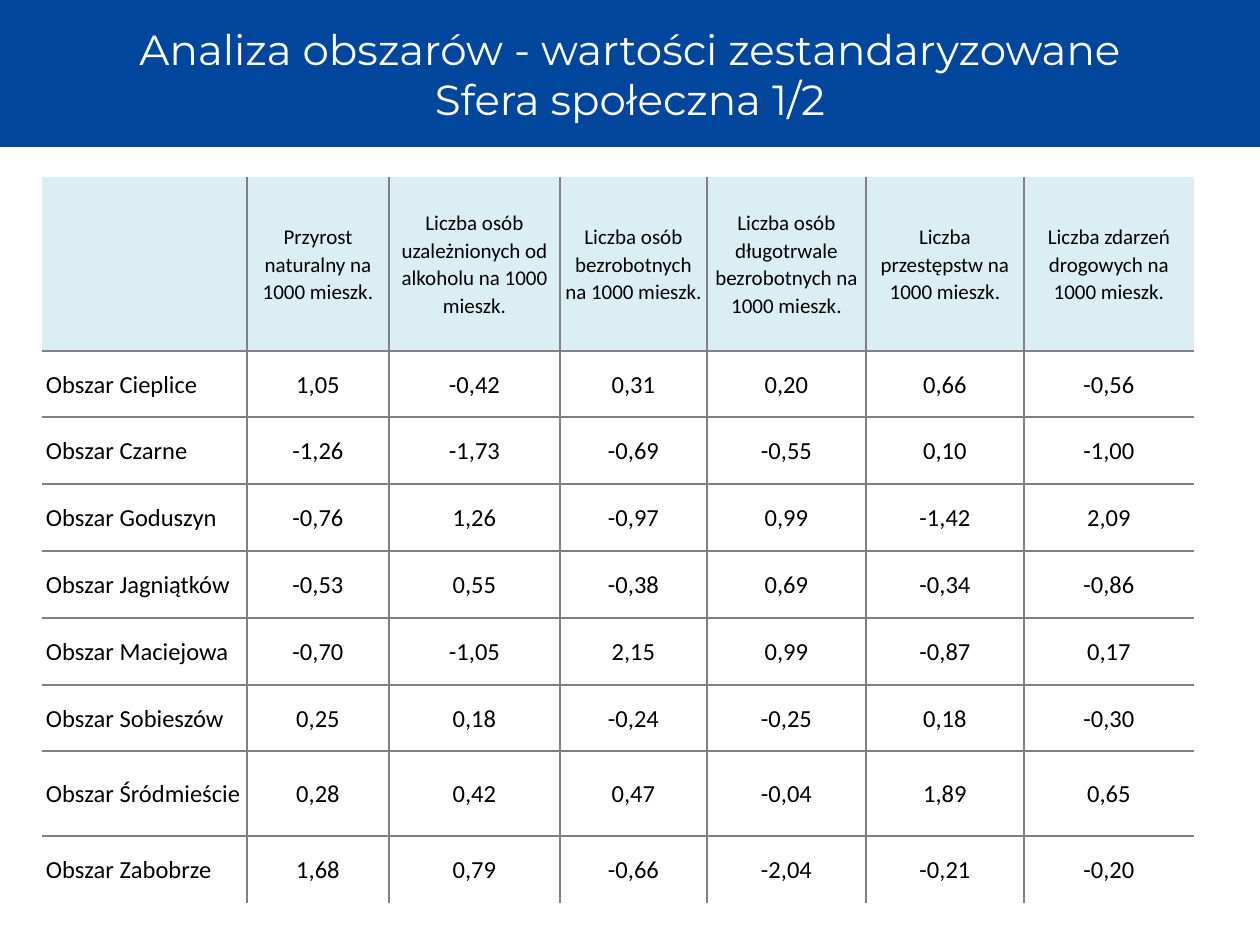
import pptx
import pptx.util
import pptx.dml.color
import pptx.enum.shapes
import pptx.enum.text
import pptx.oxml
import pptx.oxml.ns
from dataclasses import dataclass

TITLE = ["Analiza obszarów - wartości zestandaryzowane", "Sfera społeczna 1/2"]
HEADERS = [
    "",
    "Przyrost naturalny na 1000 mieszk.",
    "Liczba osób uzależnionych od alkoholu na 1000 mieszk.",
    "Liczba osób bezrobotnych na 1000 mieszk.",
    "Liczba osób długotrwale bezrobotnych na 1000 mieszk.",
    "Liczba przestępstw na 1000 mieszk.",
    "Liczba zdarzeń drogowych na 1000 mieszk.",
]
AREAS = [
    ("Obszar Cieplice", "1,05", "-0,42", "0,31", "0,20", "0,66", "-0,56"),
    ("Obszar Czarne", "-1,26", "-1,73", "-0,69", "-0,55", "0,10", "-1,00"),
    ("Obszar Goduszyn", "-0,76", "1,26", "-0,97", "0,99", "-1,42", "2,09"),
    ("Obszar Jagniątków", "-0,53", "0,55", "-0,38", "0,69", "-0,34", "-0,86"),
    ("Obszar Maciejowa", "-0,70", "-1,05", "2,15", "0,99", "-0,87", "0,17"),
    ("Obszar Sobieszów", "0,25", "0,18", "-0,24", "-0,25", "0,18", "-0,30"),
    ("Obszar Śródmieście", "0,28", "0,42", "0,47", "-0,04", "1,89", "0,65"),
    ("Obszar Zabobrze", "1,68", "0,79", "-0,66", "-2,04", "-0,21", "-0,20"),
]
COL_WIDTHS = [205, 142, 171, 147, 159, 158, 170]
ROW_HEIGHTS = [174, 66, 67, 67, 67, 67, 66, 85, 67]
TABLE_LEFT, TABLE_TOP = 42, 177
SLIDE_W, SLIDE_H, BANNER_H = 1260, 945, 147
CELL_INSET = 4


@dataclass(frozen=True)
class Theme:
    banner: str = "00469C"
    header: str = "DBEEF4"
    body: str = "FFFFFF"
    grid: str = "808080"
    text: str = "000000"
    title_text: str = "FFFFFF"
    title_font: str = "Montserrat"
    table_font: str = "Calibri"
    title_size: int = 24
    header_size: int = 12
    body_size: int = 14
    grid_pt: int = 1


THEME = Theme()
ALIGN = pptx.enum.text.PP_ALIGN
MIDDLE = pptx.enum.text.MSO_ANCHOR.MIDDLE


def px(n):
    return pptx.util.Emu(round(n * 914400 / 126))


def rgb(value):
    return pptx.dml.color.RGBColor.from_string(value)


def add_run(p, text, font, size, color):
    r = p.add_run()
    r.text = text
    r.font.name = font
    r.font.size = pptx.util.Pt(size)
    r.font.color.rgb = rgb(color)


def set_borders(cell, visible):
    tc_pr = cell._tc.get_or_add_tcPr()
    width = pptx.util.Pt(THEME.grid_pt)
    for i, side in enumerate("LRTB"):
        fill = "<a:noFill/>"
        if side in visible:
            fill = f'<a:solidFill><a:srgbClr val="{THEME.grid}"/></a:solidFill>'
        ln = pptx.oxml.parse_xml(
            f'<a:ln{side} {pptx.oxml.ns.nsdecls("a")} w="{width}">{fill}</a:ln{side}>'
        )
        tc_pr.insert(i, ln)


def add_banner(slide):
    sp = slide.shapes.add_shape(
        pptx.enum.shapes.MSO_SHAPE.RECTANGLE, 0, 0, px(SLIDE_W), px(BANNER_H)
    )
    sp.shadow.inherit = False
    sp.fill.solid()
    sp.fill.fore_color.rgb = rgb(THEME.banner)
    sp.line.fill.background()
    tf = sp.text_frame
    tf.word_wrap = True
    tf.vertical_anchor = MIDDLE
    p = tf.paragraphs[0]
    p.alignment = ALIGN.CENTER
    for i, line in enumerate(TITLE):
        if i:
            p.add_line_break()
        add_run(p, line, THEME.title_font, THEME.title_size, THEME.title_text)


def fill_cell(cell, text, row, col):
    is_header = row == 0
    inner = {
        "L": col > 0,
        "R": col < len(COL_WIDTHS) - 1,
        "T": row > 0,
        "B": row < len(ROW_HEIGHTS) - 1,
    }
    set_borders(cell, [side for side, shown in inner.items() if shown])
    cell.fill.solid()
    cell.fill.fore_color.rgb = rgb(THEME.header if is_header else THEME.body)
    cell.vertical_anchor = MIDDLE
    cell.margin_left = cell.margin_right = px(CELL_INSET)
    cell.margin_top = cell.margin_bottom = 0
    if text:
        p = cell.text_frame.paragraphs[0]
        p.alignment = ALIGN.CENTER if is_header or col else ALIGN.LEFT
        p.line_spacing = 1.07
        size = THEME.header_size if is_header else THEME.body_size
        add_run(p, text, THEME.table_font, size, THEME.text)


def add_area_table(slide):
    rows = [HEADERS, *AREAS]
    frame = slide.shapes.add_table(
        len(rows), len(HEADERS), px(TABLE_LEFT), px(TABLE_TOP),
        px(sum(COL_WIDTHS)), px(sum(ROW_HEIGHTS)),
    )
    table = frame.table
    table.first_row = False
    table.horz_banding = False
    for column, width in zip(table.columns, COL_WIDTHS):
        column.width = px(width)
    for i, (values, height) in enumerate(zip(rows, ROW_HEIGHTS)):
        table.rows[i].height = px(height)
        for j, text in enumerate(values):
            fill_cell(table.cell(i, j), text, i, j)


def main():
    prs = pptx.Presentation()
    prs.slide_width, prs.slide_height = px(SLIDE_W), px(SLIDE_H)
    slide = prs.slides.add_slide(prs.slide_layouts[6])
    add_banner(slide)
    add_area_table(slide)
    prs.save("out.pptx")


if __name__ == "__main__":
    main()
